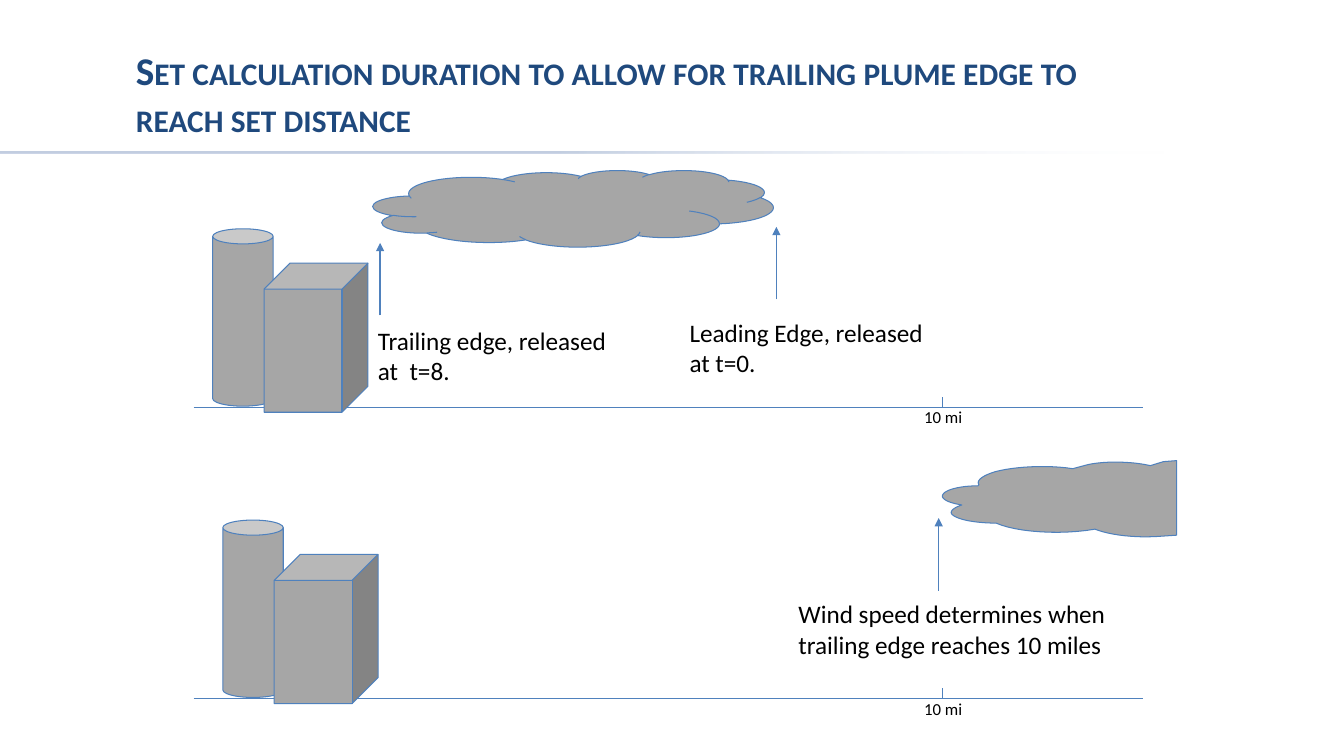
from pptx import Presentation
from pptx.dml.color import RGBColor
from pptx.enum.shapes import MSO_CONNECTOR, MSO_SHAPE
from pptx.enum.text import MSO_ANCHOR, PP_ALIGN
from pptx.oxml.ns import qn
from pptx.util import Inches, Pt
from lxml.etree import SubElement

THEME = {
    "font": "Calibri",
    "title": "1F497D",
    "text": "000000",
    "fill": "A6A6A6",
    "line": "4F81BD",
    "rule": [("3C619E", 0.48, 31), ("E1E8F5", 1.0, 0)],
    "title_size": 28,
    "label_size": 18,
    "tick_size": 12,
}

TITLE = "Set calculation duration to allow for trailing plume edge to reach set distance"
TITLE_BOX = (1.25, 0.3, 9.92, 1.25)
RULE_BOX = (-0.02, 1.5, 11.6, 0.02)
CLOUD_BOX = (3.7, 1.69, 3.97, 0.76)
TICK_TEXT = "10 mi"
TICK_X = 9.35
GROUND = (1.92, 11.34)
SCENES = [(4.04, 2.11), (6.93, 2.21)]
LABELS = [
    ("Leading Edge, released at t=0.", (6.74, 3.1, 2.58, 0.71)),
    ("Trailing edge, released at  t=8.", (3.65, 3.18, 2.6, 0.71)),
    ("Wind speed determines when trailing edge reaches 10 miles", (7.82, 5.89, 3.31, 0.71)),
]
ARROWS = [(7.7, 2.97), (3.77, 3.13), (9.31, 5.86)]
ARROW_LENGTH = 0.72

PLUME_START = (11.67, 4.57)
PLUME_STEPS = [
    (11.67, 5.31),
    (11.52, 5.32),
    (11.27, 5.34, 11.01, 5.31, 10.86, 5.25),
    (10.52, 5.31, 10.08, 5.28, 9.88, 5.19),
    (9.69, 5.19, 9.51, 5.16, 9.45, 5.11),
    (9.41, 5.08, 9.45, 5.04, 9.54, 5.01),
    (9.41, 4.99, 9.33, 4.95, 9.35, 4.91),
    (9.37, 4.86, 9.52, 4.82, 9.7, 4.82),
    (9.71, 4.81),
    (9.68, 4.77, 9.74, 4.72, 9.87, 4.68),
    (10.06, 4.63, 10.38, 4.61, 10.64, 4.65),
    (10.79, 4.61),
    (10.97, 4.57, 11.24, 4.58, 11.41, 4.62),
    (11.54, 4.58),
]
CURVE_PARTS = 12


def color(name):
    return RGBColor.from_string(THEME[name])


def box(values):
    return [Inches(v) for v in values]


def paint(sp):
    sp.shadow.inherit = False
    sp.fill.solid()
    sp.fill.fore_color.rgb = color("fill")
    sp.line.color.rgb = color("line")
    sp.line.width = Pt(0.75)


def add_solid(s, kind, at):
    paint(s.shapes.add_shape(kind, *box(at)))


def add_line(s, x1, y1, x2, y2, arrow=False):
    cx = s.shapes.add_connector(MSO_CONNECTOR.STRAIGHT, *box((x1, y1, x2, y2)))
    cx.line.color.rgb = color("line")
    cx.line.width = Pt(1)
    if arrow:
        SubElement(cx.line._get_or_add_ln(), qn("a:tailEnd"), type="triangle")
    SubElement(cx._element.spPr, qn("a:effectLst"))


def add_text(s, text, at, size, tone="text", align=PP_ALIGN.LEFT):
    sp = s.shapes.add_textbox(*box(at))
    tf = sp.text_frame
    tf.word_wrap = True
    tf.text = text
    p = tf.paragraphs[0]
    p.alignment = align
    r = p.runs[0]
    r.font.name = THEME["font"]
    r.font.size = Pt(THEME[size])
    r.font.color.rgb = color(tone)
    return tf, r


def add_title(s):
    tf, r = add_text(s, TITLE, TITLE_BOX, "title_size", "title")
    tf.vertical_anchor = MSO_ANCHOR.MIDDLE
    r.font.bold = True
    r._r.get_or_add_rPr().set("cap", "small")


def add_rule(s):
    sp = s.shapes.add_shape(MSO_SHAPE.RECTANGLE, *box(RULE_BOX))
    sp.shadow.inherit = False
    sp.line.fill.background()
    sp.fill.gradient()
    sp.fill.gradient_angle = 0
    for stop, (rgb, position, alpha) in zip(sp.fill.gradient_stops, THEME["rule"]):
        stop.color.rgb = RGBColor.from_string(rgb)
        stop.position = position
        tone = stop._gs.find(qn("a:srgbClr"))
        SubElement(tone, qn("a:alpha"), val=str(alpha * 1000))


def bezier(points, t):
    u = 1 - t
    weights = (u**3, 3 * u * u * t, 3 * u * t * t, t**3)
    return tuple(sum(w * pt[axis] for w, pt in zip(weights, points)) for axis in (0, 1))


def add_cut_plume(s):
    outline = [PLUME_START]
    for step in PLUME_STEPS:
        points = [outline[-1], *zip(step[::2], step[1::2])]
        if len(points) == 2:
            outline.append(points[1])
        else:
            outline += [bezier(points, i / CURVE_PARTS) for i in range(1, CURVE_PARTS + 1)]
    corners = [box(pt) for pt in outline]
    builder = s.shapes.build_freeform(*corners[0])
    builder.add_line_segments(corners[1:], close=True)
    paint(builder.convert_to_shape())


def add_scene(s, ground, left):
    add_line(s, GROUND[0], ground, GROUND[1], ground)
    add_solid(s, MSO_SHAPE.CAN, (left, ground - 1.77, 0.6, 1.76))
    add_solid(s, MSO_SHAPE.CUBE, (left + 0.51, ground - 1.43, 1.03, 1.48))
    add_line(s, TICK_X, ground - 0.1, TICK_X, ground)
    add_text(s, TICK_TEXT, (TICK_X - 0.43, ground - 0.05, 0.87, 0.3), "tick_size", align=PP_ALIGN.CENTER)


def main():
    prs = Presentation()
    prs.slide_width, prs.slide_height = Inches(13.33), Inches(7.5)
    s = prs.slides.add_slide(prs.slide_layouts[6])
    add_rule(s)
    add_title(s)
    for ground, left in SCENES:
        add_scene(s, ground, left)
    add_solid(s, MSO_SHAPE.CLOUD, CLOUD_BOX)
    add_cut_plume(s)
    for x, y in ARROWS:
        add_line(s, x, y, x, y - ARROW_LENGTH, arrow=True)
    for text, at in LABELS:
        add_text(s, text, at, "label_size")
    prs.save("out.pptx")


if __name__ == "__main__":
    main()
